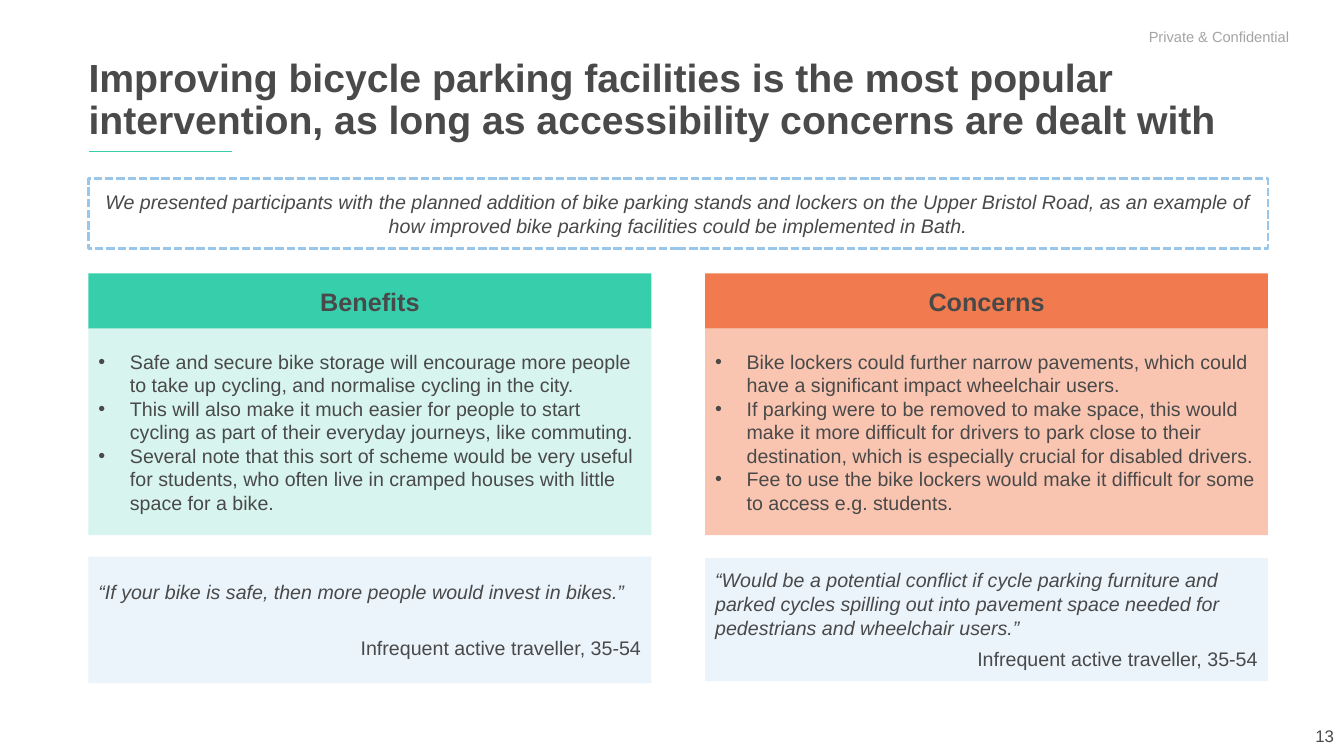
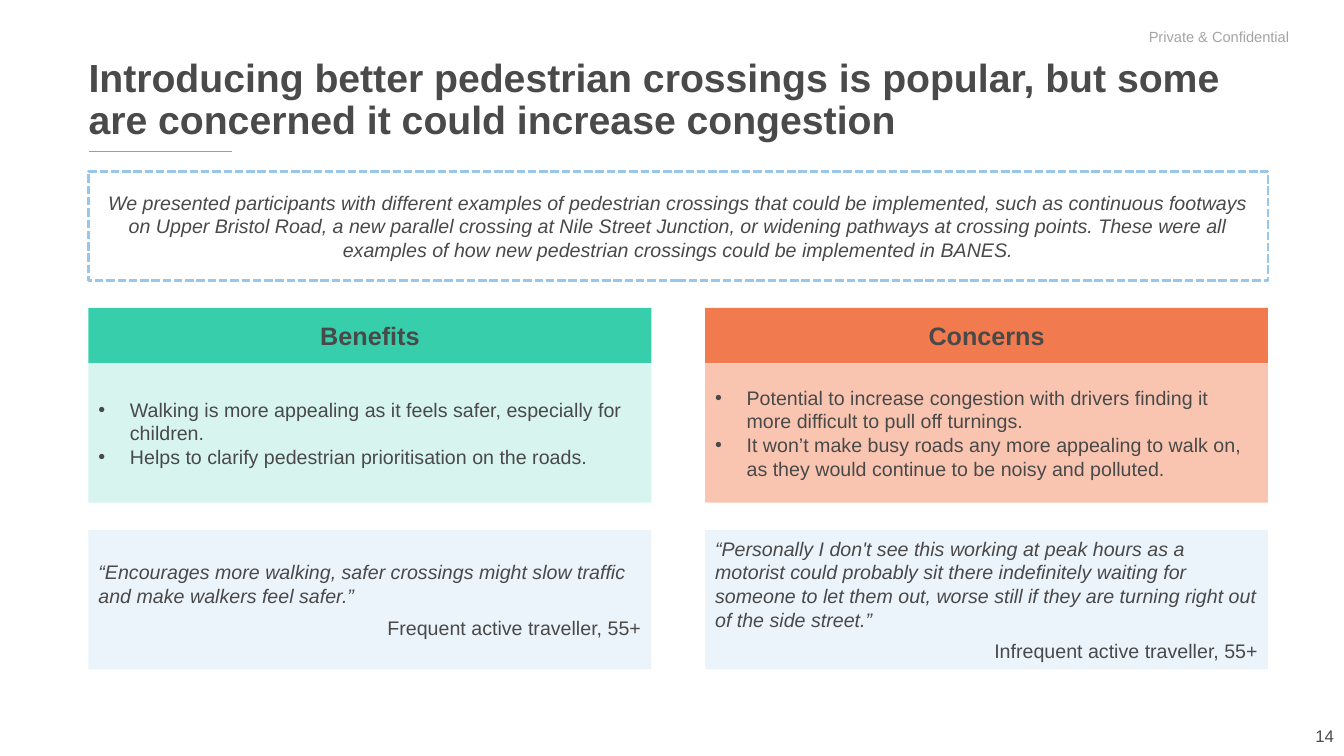
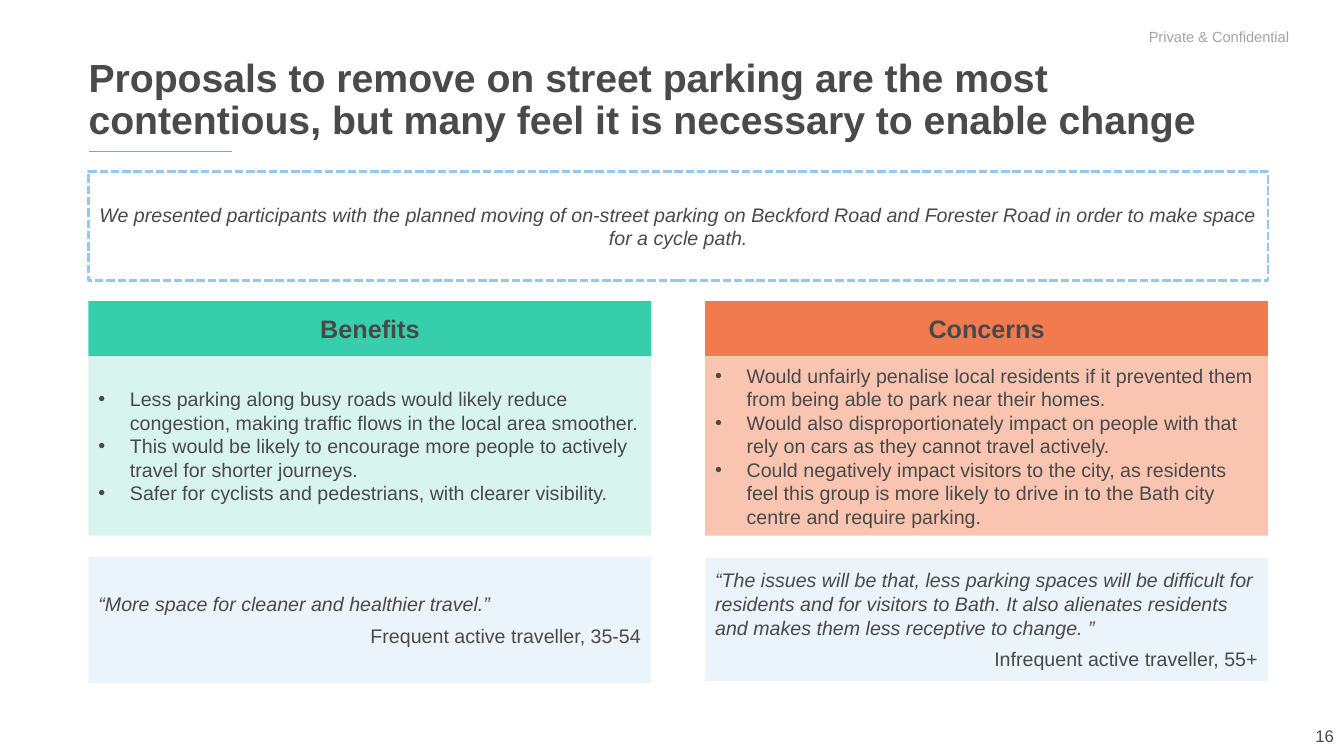
from dataclasses import dataclass

from lxml.etree import SubElement
from pptx import Presentation
from pptx.dml.color import RGBColor
from pptx.enum.dml import MSO_LINE as Dash
from pptx.enum.shapes import MSO_CONNECTOR as Connector, MSO_SHAPE as Preset
from pptx.enum.text import MSO_ANCHOR as Anchor, MSO_AUTO_SIZE as AutoSize, PP_ALIGN as Align
from pptx.oxml.ns import qn
from pptx.util import Pt


@dataclass(frozen=True)
class Theme:
    font: str = "Arial"
    title_ink: str = "4A4A4A"
    ink: str = "494949"
    muted: str = "A4A4A4"
    white: str = "FFFFFF"
    accent: str = "37CEAC"
    outline: str = "99C7EC"
    quote_fill: str = "EBF4FB"
    benefits: tuple = ("37CEAC", "D7F5EE")
    concerns: tuple = ("F17B4E", "F9C5B1")
    title_size: float = 28
    heading_size: float = 18
    body_size: float = 14
    page_size: float = 12
    label_size: float = 10.5


@dataclass(frozen=True)
class Column:
    heading: str
    bullets: tuple
    quote: str
    speaker: str
    quote_top: float
    quote_height: float
    quote_gap: float = 6


LEFT, WIDTH = 63.25, 842.5
COLUMN_WIDTH, COLUMN_GAP = 402, 38.5
HEADING_HEIGHT = 39.5
INDENT = 22.5


class Deck:
    def __init__(self, theme):
        self.theme = theme
        self.presentation = Presentation()
        self.presentation.slide_width = Pt(960)
        self.presentation.slide_height = Pt(540)
        self.slide = None

    def style(self, paragraph, size, color=None, bold=False, italic=False, align=Align.LEFT):
        paragraph.alignment = align
        for run in paragraph.runs:
            font = run.font
            font.name, font.size = self.theme.font, Pt(size)
            font.bold, font.italic = bold, italic
            font.color.rgb = RGBColor.from_string(color or self.theme.ink)

    def add_box(self, left, top, width, height, text, fill=None):
        shape = self.slide.shapes.add_shape(
            Preset.RECTANGLE, Pt(left), Pt(top), Pt(width), Pt(height))
        shape.shadow.inherit = False
        shape.line.fill.background()
        if fill:
            shape.fill.solid()
            shape.fill.fore_color.rgb = RGBColor.from_string(fill)
        else:
            shape.fill.background()
        frame = shape.text_frame
        frame.word_wrap = True
        frame.vertical_anchor = Anchor.MIDDLE
        frame.text = text
        return shape

    def add_slide(self, title, page):
        self.slide = self.presentation.slides.add_slide(self.presentation.slide_layouts[5])
        self.add_title(title)
        self.add_label()
        self.add_title_rule()
        self.add_page_number(page)

    def add_title(self, text):
        shape = self.slide.shapes.title
        shape.left, shape.top = Pt(LEFT), Pt(38.25)
        shape.width, shape.height = Pt(WIDTH), Pt(62.75)
        frame = shape.text_frame
        frame.text = text
        frame.word_wrap = True
        frame.auto_size = AutoSize.NONE
        frame.vertical_anchor = Anchor.TOP
        frame.margin_left = 0
        paragraph = frame.paragraphs[0]
        paragraph.line_spacing = 0.9
        self.style(paragraph, self.theme.title_size, self.theme.title_ink, bold=True)

    def add_label(self):
        shape = self.add_box(813.5, 13.75, 117.5, 25, "Private & Confidential", self.theme.white)
        self.style(shape.text_frame.paragraphs[0], self.theme.label_size, self.theme.muted)

    def add_title_rule(self):
        line = self.slide.shapes.add_connector(
            Connector.STRAIGHT, Pt(LEFT), Pt(108), Pt(165.75), Pt(108))
        line.line.color.rgb = RGBColor.from_string(self.theme.accent)
        line.line.width = Pt(1)
        SubElement(line._element.spPr, qn("a:effectLst"))

    def add_page_number(self, page):
        box = self.slide.shapes.add_textbox(Pt(744), Pt(511.25), Pt(216), Pt(28.75))
        frame = box.text_frame
        frame.word_wrap = True
        frame.vertical_anchor = Anchor.MIDDLE
        frame.text = str(page)
        self.style(frame.paragraphs[0], self.theme.page_size, self.theme.title_ink,
                   align=Align.RIGHT)

    def add_intro(self, top, height, text):
        shape = self.add_box(LEFT, top, WIDTH, height, text)
        shape.line.color.rgb = RGBColor.from_string(self.theme.outline)
        shape.line.width = Pt(2)
        shape.line.dash_style = Dash.SQUARE_DOT
        self.style(shape.text_frame.paragraphs[0], self.theme.body_size,
                   italic=True, align=Align.CENTER)

    def add_heading(self, left, top, text, fill):
        shape = self.add_box(left, top, COLUMN_WIDTH, HEADING_HEIGHT, text, fill)
        self.style(shape.text_frame.paragraphs[0], self.theme.heading_size,
                   bold=True, align=Align.CENTER)

    def add_bullets(self, left, top, height, bullets, fill):
        shape = self.add_box(left, top, COLUMN_WIDTH, height, "\n".join(bullets), fill)
        for paragraph in shape.text_frame.paragraphs:
            properties = paragraph._p.get_or_add_pPr()
            properties.set("marL", str(Pt(INDENT)))
            properties.set("indent", str(-Pt(INDENT)))
            SubElement(properties, qn("a:buFont")).set("typeface", self.theme.font)
            SubElement(properties, qn("a:buChar")).set("char", "•")
            self.style(paragraph, self.theme.body_size)

    def add_quote(self, left, column):
        shape = self.add_box(left, column.quote_top, COLUMN_WIDTH, column.quote_height,
                             f"{column.quote}\n{column.speaker}", self.theme.quote_fill)
        quote, speaker = shape.text_frame.paragraphs
        quote.space_after = Pt(column.quote_gap)
        self.style(quote, self.theme.body_size, italic=True)
        self.style(speaker, self.theme.body_size, align=Align.RIGHT)

    def add_columns(self, top, body_height, columns):
        fills = (self.theme.benefits, self.theme.concerns)
        for index, (column, (heading_fill, body_fill)) in enumerate(zip(columns, fills)):
            left = LEFT + index * (COLUMN_WIDTH + COLUMN_GAP)
            self.add_heading(left, top, column.heading, heading_fill)
            self.add_bullets(left, top + HEADING_HEIGHT, body_height, column.bullets, body_fill)
            self.add_quote(left, column)


def main():
    deck = Deck(Theme())

    deck.add_slide("Improving bicycle parking facilities is the most popular intervention, "
                   "as long as accessibility concerns are dealt with", 13)
    deck.add_intro(127.5, 50, "We presented participants with the planned addition of bike parking "
                   "stands and lockers on the Upper Bristol Road, as an example of how improved "
                   "bike parking facilities could be implemented in Bath.")
    deck.add_columns(195.25, 147.5, (
        Column("Benefits", (
            "Safe and secure bike storage will encourage more people to take up cycling, "
            "and normalise cycling in the city.",
            "This will also make it much easier for people to start cycling as part of their "
            "everyday journeys, like commuting.",
            "Several note that this sort of scheme would be very useful for students, who often "
            "live in cramped houses with little space for a bike.",
        ), "“If your bike is safe, then more people would invest in bikes.”",
            "Infrequent active traveller, 35-54", 397.5, 90.5, 23),
        Column("Concerns", (
            "Bike lockers could further narrow pavements, which could have a significant impact "
            "wheelchair users.",
            "If parking were to be removed to make space, this would make it more difficult for "
            "drivers to park close to their destination, which is especially crucial for "
            "disabled drivers.",
            "Fee to use the bike lockers would make it difficult for some to access "
            "e.g. students.",
        ), "“Would be a potential conflict if cycle parking furniture and parked cycles spilling "
           "out into pavement space needed for pedestrians and wheelchair users.”",
            "Infrequent active traveller, 35-54", 398.75, 87.75),
    ))

    deck.add_slide("Introducing better pedestrian crossings is popular, but some are concerned "
                   "it could increase congestion", 14)
    deck.add_intro(122.5, 78, "We presented participants with different examples of pedestrian "
                   "crossings that could be implemented, such as continuous footways on Upper "
                   "Bristol Road, a new parallel crossing at Nile Street Junction, or widening "
                   "pathways at crossing points. These were all examples of how new pedestrian "
                   "crossings could be implemented in BANES.")
    deck.add_columns(220, 99.5, (
        Column("Benefits", (
            "Walking is more appealing as it feels safer, especially for children.",
            "Helps to clarify pedestrian prioritisation on the roads.",
        ), "“Encourages more walking, safer crossings might slow traffic and make walkers "
           "feel safer.”",
            "Frequent active traveller, 55+", 378.75, 99.5),
        Column("Concerns", (
            "Potential to increase congestion with drivers finding it more difficult to pull "
            "off turnings.",
            "It won’t make busy roads any more appealing to walk on, as they would continue to "
            "be noisy and polluted.",
        ), "“Personally I don't see this working at peak hours as a motorist could probably sit "
           "there indefinitely waiting for someone to let them out, worse still if they are "
           "turning right out of the side street.”",
            "Infrequent active traveller, 55+", 378.75, 99.5),
    ))

    deck.add_slide("Proposals to remove on street parking are the most contentious, but many "
                   "feel it is necessary to enable change", 16)
    deck.add_intro(122.5, 78, "We presented participants with the planned moving of on-street "
                   "parking on Beckford Road and Forester Road in order to make space for a "
                   "cycle path.")
    deck.add_columns(215, 128.25, (
        Column("Benefits", (
            "Less parking along busy roads would likely reduce congestion, making traffic flows "
            "in the local area smoother.",
            "This would be likely to encourage more people to actively travel for shorter "
            "journeys.",
            "Safer for cyclists and pedestrians, with clearer visibility.",
        ), "“More space for cleaner and healthier travel.”",
            "Frequent active traveller, 35-54", 397.5, 90.5),
        Column("Concerns", (
            "Would unfairly penalise local residents if it prevented them from being able to "
            "park near their homes.",
            "Would also disproportionately impact on people with that rely on cars as they "
            "cannot travel actively.",
            "Could negatively impact visitors to the city, as residents feel this group is more "
            "likely to drive in to the Bath city centre and require parking.",
        ), "“The issues will be that, less parking spaces will be difficult for residents and "
           "for visitors to Bath. It also alienates residents and makes them less receptive "
           "to change. ”",
            "Infrequent active traveller, 55+", 398.75, 87.75),
    ))

    deck.presentation.save("out.pptx")


if __name__ == "__main__":
    main()
